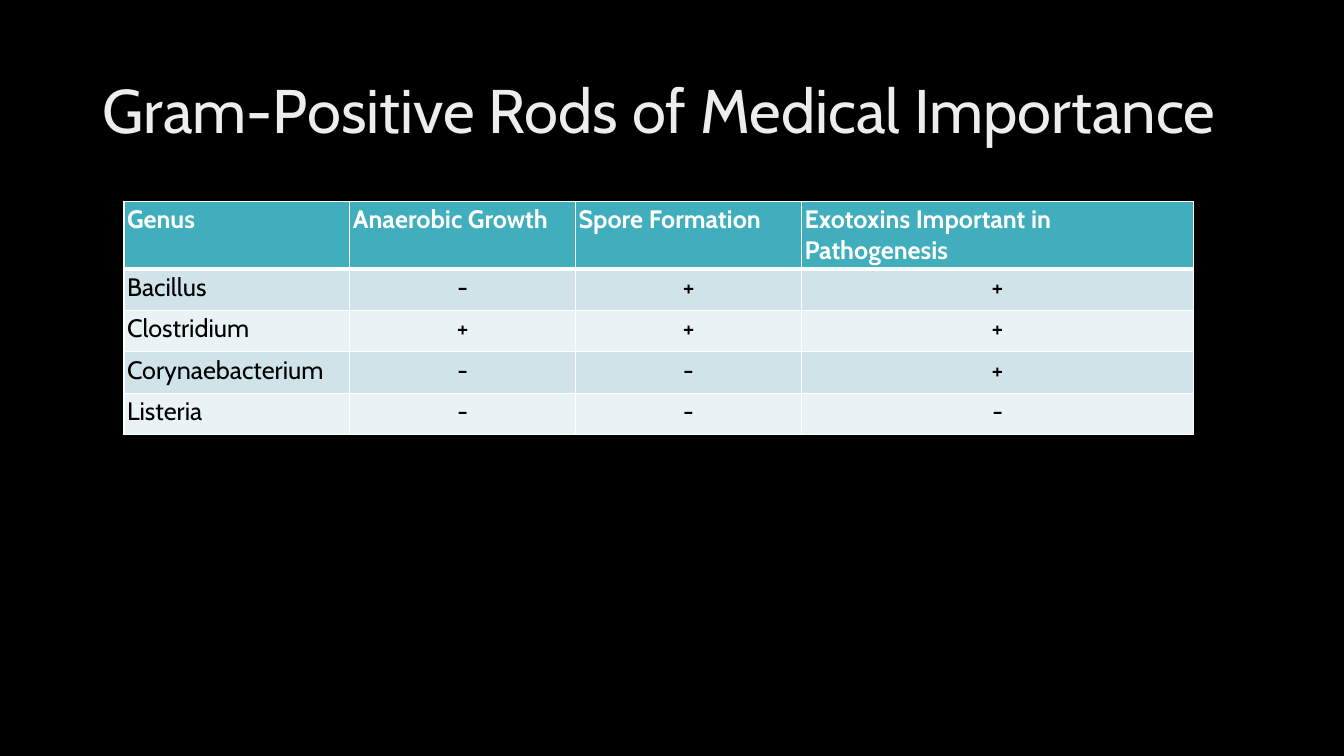
from lxml.etree import SubElement
from pptx import Presentation
from pptx.dml.color import RGBColor
from pptx.enum.text import MSO_ANCHOR, MSO_AUTO_SIZE, PP_ALIGN
from pptx.oxml.ns import qn
from pptx.util import Inches, Pt

BLACK = RGBColor(0x00, 0x00, 0x00)
WHITE = RGBColor(0xFF, 0xFF, 0xFF)
TITLE_GREY = RGBColor(0xED, 0xED, 0xED)
HEADER_TEAL = RGBColor(0x41, 0xAE, 0xBD)
BANDS = (RGBColor(0xCF, 0xE3, 0xE8), RGBColor(0xE9, 0xF2, 0xF4))

HEADINGS = ("Genus", "Anaerobic Growth", "Spore Formation",
            "Exotoxins Important in Pathogenesis")
GENERA = (
    ("Bacillus", "-", "+", "+"),
    ("Clostridium", "+", "+", "+"),
    ("Corynaebacterium", "-", "-", "+"),
    ("Listeria", "-", "-", "-"),
)
COLUMN_WIDTHS = (2.24, 2.24, 2.24, 3.89)
HEADER_HEIGHT, ROW_HEIGHT = 0.66, 0.41


def write(frame, text, size=18, color=BLACK, bold=False,
          align=PP_ALIGN.LEFT, line_spacing=None):
    paragraph = frame.paragraphs[0]
    paragraph.text = text
    paragraph.alignment = align
    paragraph.line_spacing = line_spacing
    font = paragraph.font
    font.name, font.size, font.bold = "Cabin", Pt(size), bold
    font.color.rgb = color


def add_borders(cell, **widths):
    """Draw white borders; widths are points keyed by side: L, R, T, B."""
    properties = cell._tc.get_or_add_tcPr()
    for side, width in widths.items():
        line = SubElement(properties, qn(f"a:ln{side}"), w=str(Pt(width)))
        fill = SubElement(line, qn("a:solidFill"))
        SubElement(fill, qn("a:srgbClr"), val=str(WHITE))


class SlideBuilder:
    def __init__(self, presentation):
        self.slide = presentation.slides.add_slide(presentation.slide_layouts[5])
        background = self.slide.background.fill
        background.solid()
        background.fore_color.rgb = BLACK

    def title(self, text, left, top, width, height):
        title = self.slide.shapes.title
        title.left, title.top = Inches(left), Inches(top)
        title.width, title.height = Inches(width), Inches(height)
        frame = title.text_frame
        frame.word_wrap = True
        frame.auto_size = MSO_AUTO_SIZE.NONE
        frame.vertical_anchor = MSO_ANCHOR.MIDDLE
        write(frame, text, size=44, color=TITLE_GREY, line_spacing=0.9)

    def table(self, headings, records, left, top):
        height = HEADER_HEIGHT + ROW_HEIGHT * len(records)
        table = self.slide.shapes.add_table(
            len(records) + 1, len(headings), Inches(left), Inches(top),
            Inches(sum(COLUMN_WIDTHS)), Inches(height)).table
        for column, width in zip(table.columns, COLUMN_WIDTHS):
            column.width = Inches(width)
        for index, values in enumerate((headings, *records)):
            table.rows[index].height = Inches(ROW_HEIGHT if index else HEADER_HEIGHT)
            for position, value in enumerate(values):
                self.cell(table.cell(index, position), value, index, position)

    def cell(self, cell, text, row, column):
        is_header = row == 0
        cell.margin_left = cell.margin_right = Inches(0.03)
        cell.margin_top = cell.margin_bottom = Inches(0.03)
        add_borders(cell, L=1, R=1, T=3 if row == 1 else 1, B=3 if is_header else 1)
        cell.fill.solid()
        cell.fill.fore_color.rgb = HEADER_TEAL if is_header else BANDS[(row - 1) % 2]
        write(cell.text_frame, text, bold=is_header,
              color=WHITE if is_header else BLACK,
              align=PP_ALIGN.CENTER if row and column else PP_ALIGN.LEFT)


def main():
    presentation = Presentation()
    presentation.slide_width, presentation.slide_height = Inches(13.33), Inches(7.5)
    builder = SlideBuilder(presentation)
    builder.title("Gram-Positive Rods of Medical Importance", 0.92, 0.4, 11.5, 1.45)
    builder.table(HEADINGS, GENERA, 1.23, 2)
    presentation.save("out.pptx")


if __name__ == "__main__":
    main()
